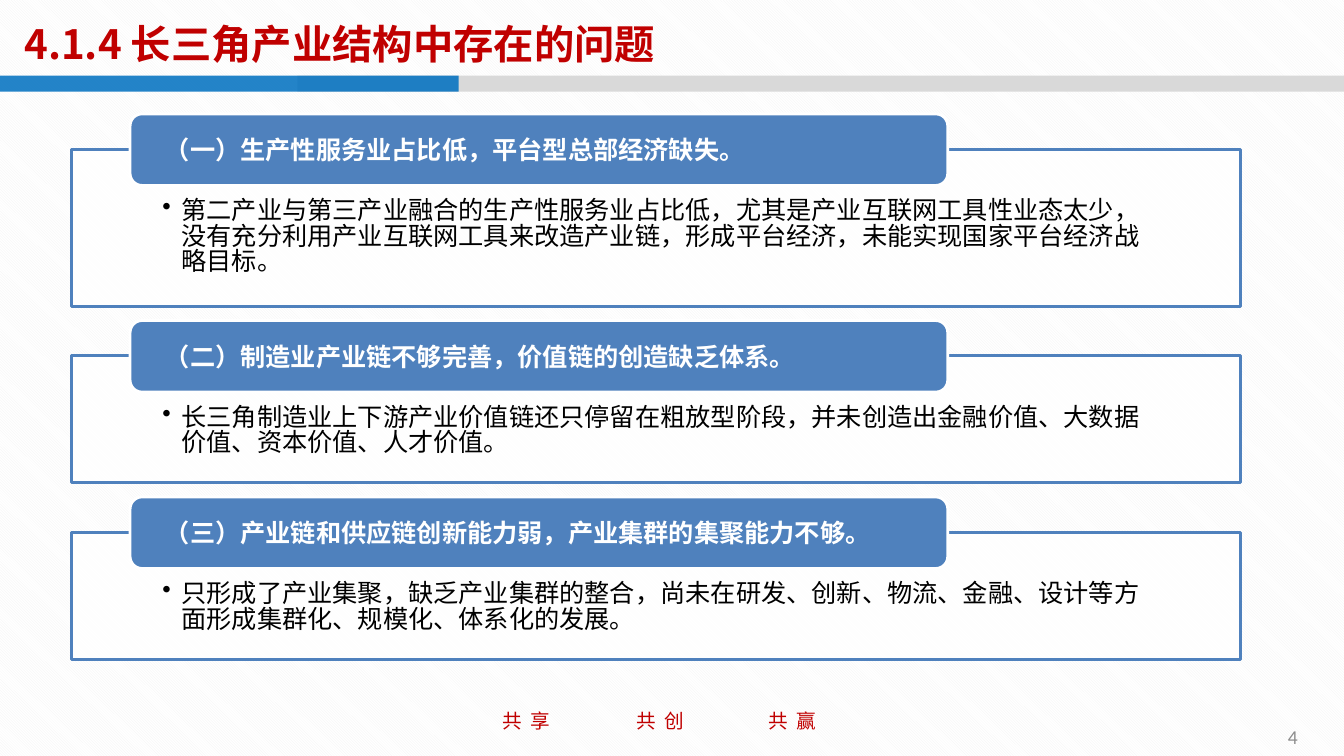
from dataclasses import dataclass

from lxml import etree
from pptx import Presentation
from pptx.dml.color import RGBColor
from pptx.enum.dml import MSO_PATTERN
from pptx.enum.shapes import MSO_SHAPE
from pptx.enum.text import MSO_ANCHOR, MSO_AUTO_SIZE, PP_ALIGN
from pptx.oxml.ns import qn
from pptx.util import Inches, Pt

RECT, ROUNDED = MSO_SHAPE.RECTANGLE, MSO_SHAPE.ROUNDED_RECTANGLE
TOP, MIDDLE = MSO_ANCHOR.TOP, MSO_ANCHOR.MIDDLE
LEFT, RIGHT = PP_ALIGN.LEFT, PP_ALIGN.RIGHT
DIAGONAL = MSO_PATTERN.LIGHT_DOWNWARD_DIAGONAL
NO_AUTOFIT = MSO_AUTO_SIZE.NONE


@dataclass(frozen=True)
class Theme:
    red: str = "C00000"
    blue: str = "4F81BD"
    band_blue: str = "0070C0"
    band_gray: str = "D9D9D9"
    number_gray: str = "8C8C8C"
    pattern: str = "F2F2F2"
    white: str = "FFFFFF"
    black: str = "000000"
    chinese: str = "Noto Sans CJK SC"
    latin: str = "Calibri"
    title: float = 28.8
    body: float = 18
    small: float = 14


theme = Theme()


def write(shape, text, size=theme.body, color=theme.black, font=theme.chinese, bold=False,
          align=LEFT, anchor=TOP, insets=(0.1, 0.05, 0.1, 0.05), bullet=False,
          line_spacing=None, letter_spacing=0, tabs=()):
    frame = shape.text_frame
    frame.word_wrap = True
    frame.auto_size = NO_AUTOFIT
    frame.vertical_anchor = anchor
    frame.margin_left, frame.margin_top, frame.margin_right, frame.margin_bottom = map(Inches, insets)
    paragraph = frame.paragraphs[0]
    properties = paragraph._p.get_or_add_pPr()
    if bullet:
        properties.set("marL", str(Inches(0.19)))
        properties.set("indent", str(Inches(-0.19)))
        etree.SubElement(properties, qn("a:buChar"), char="•")
    if tabs:
        stops = etree.SubElement(properties, qn("a:tabLst"))
        for stop in tabs:
            etree.SubElement(stops, qn("a:tab"), pos=str(Inches(stop)), algn="l")
    paragraph.alignment = align
    if line_spacing:
        paragraph.line_spacing = line_spacing
    run = paragraph.add_run()
    run.text = text
    run.font.size = Pt(size)
    run.font.bold = bold
    run.font.name = font
    run.font.color.rgb = RGBColor.from_string(color)
    run_properties = run._r.get_or_add_rPr()
    etree.SubElement(run_properties, qn("a:ea"), typeface=font)
    if letter_spacing:
        run_properties.set("spc", str(letter_spacing * 100))


def draw(kind, place, fill, line=None, opacity=100):
    shape = slide.shapes.add_shape(kind, *map(Inches, place))
    shape.shadow.inherit = False
    shape.fill.solid()
    shape.fill.fore_color.rgb = RGBColor.from_string(fill)
    if opacity < 100:
        color = shape._element.spPr.find(qn("a:solidFill"))[0]
        etree.SubElement(color, qn("a:alpha"), val=str(opacity * 1000))
    if line:
        shape.line.color.rgb = RGBColor.from_string(line)
        shape.line.width = Pt(2)
    else:
        shape.line.fill.background()
    return shape


presentation = Presentation()
presentation.slide_width = Inches(13.33)
presentation.slide_height = Inches(7.5)
slide = presentation.slides.add_slide(presentation.slide_layouts[5])

backdrop = slide.background.fill
backdrop.patterned()
backdrop.pattern = DIAGONAL
backdrop.fore_color.rgb = RGBColor.from_string(theme.pattern)
backdrop.back_color.rgb = RGBColor.from_string(theme.white)

motto = slide.shapes.add_textbox(Inches(4.89), Inches(6.98), Inches(3.9), Inches(0.35))
write(motto, "共享\t共创\t共赢", size=theme.small, color=theme.red, letter_spacing=6, tabs=(1.32, 2.63))

draw(RECT, (2.95, 0.75, 10.38, 0.16), theme.band_gray)
draw(RECT, (0, 0.75, 4.55, 0.16), theme.band_blue, opacity=86)

title = slide.shapes.title
title.left, title.top, title.width, title.height = map(Inches, (0.14, 0.12, 10.87, 0.63))
write(title, "4.1.4 长三角产业结构中存在的问题", size=theme.title, color=theme.red, bold=True, anchor=MIDDLE)

page_number = slide.shapes.add_textbox(Inches(9.86), Inches(7.11), Inches(3.11), Inches(0.4))
write(page_number, "4", size=theme.small, color=theme.number_gray, font=theme.latin,
      align=RIGHT, anchor=MIDDLE)

problems = [
    ("（一）生产性服务业占比低，平台型总部经济缺失。",
     "第二产业与第三产业融合的生产性服务业占比低，尤其是产业互联网工具性业态太少，"
     "没有充分利用产业互联网工具来改造产业链，形成平台经济，未能实现国家平台经济战略目标。", 1.56),
    ("（二）制造业产业链不够完善，价值链的创造缺乏体系。",
     "长三角制造业上下游产业价值链还只停留在粗放型阶段，并未创造出金融价值、大数据价值、"
     "资本价值、人才价值。", 1.26),
    ("（三）产业链和供应链创新能力弱，产业集群的集聚能力不够。",
     "只形成了产业集聚，缺乏产业集群的整合，尚未在研发、创新、物流、金融、设计等方面"
     "形成集群化、规模化、体系化的发展。", 1.26),
]
top, gap = 1.48, 0.49
for heading, detail, height in problems:
    panel = draw(RECT, (0.71, top, 11.59, height), theme.white, line=theme.blue, opacity=90)
    write(panel, detail, insets=(0.9, 0.5, 0.9, 0.14), bullet=True, line_spacing=0.84)
    banner = draw(ROUNDED, (1.29, top - 0.35, 8.11, 0.71), theme.blue, line=theme.white)
    write(banner, heading, color=theme.white, bold=True, anchor=MIDDLE, insets=(0.31, 0, 0.31, 0))
    top += height + gap

presentation.save("out.pptx")
